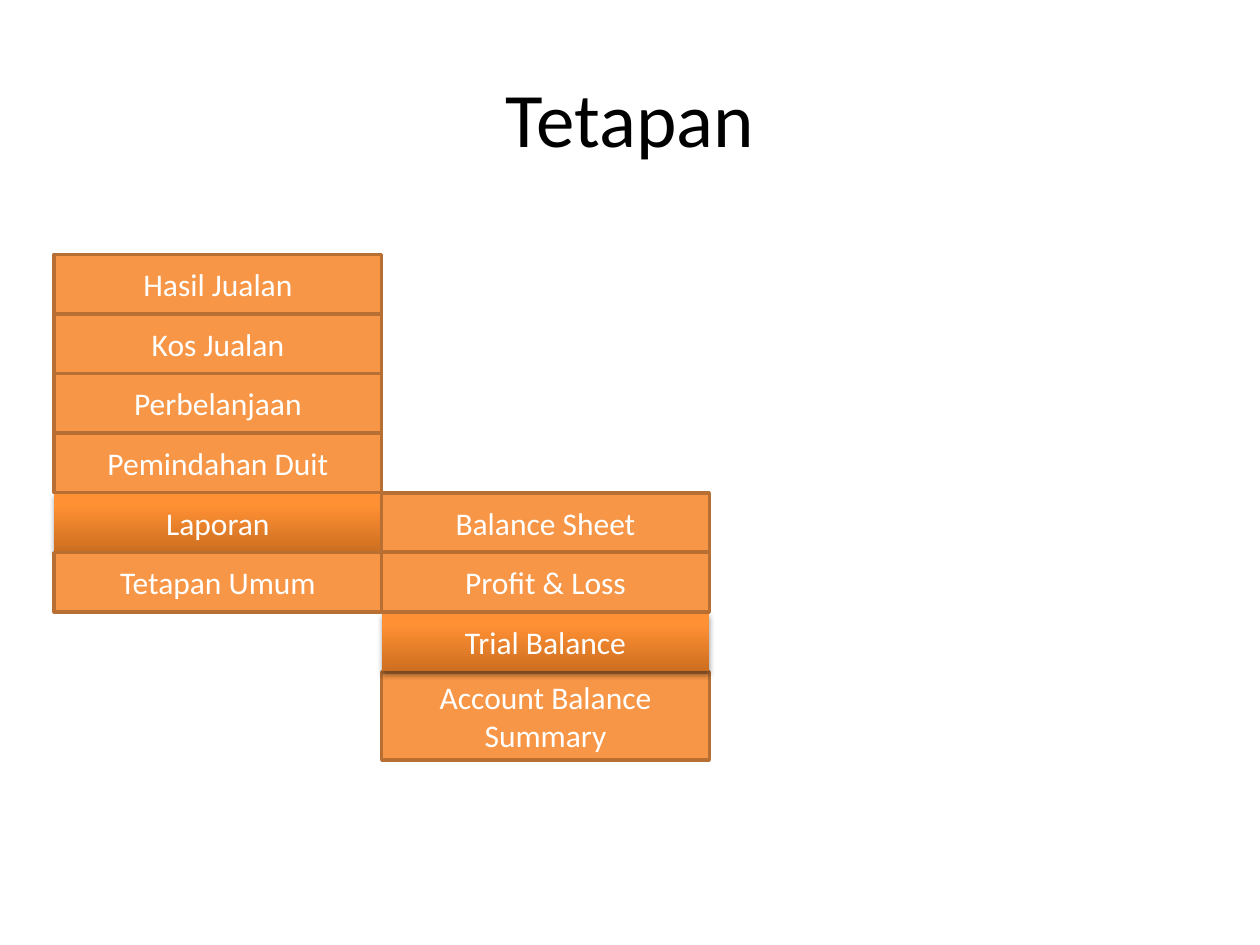
"""Build the Tetapan menu slide with its open report submenu."""
from copy import deepcopy

from lxml.etree import SubElement
from pptx import Presentation
from pptx.dml.color import RGBColor
from pptx.enum.shapes import MSO_SHAPE
from pptx.enum.text import MSO_ANCHOR, PP_ALIGN
from pptx.oxml.ns import qn
from pptx.util import Inches, Pt


def rgb(value):
    return RGBColor.from_string(value)


def write(sp, text, size=18, color="FFFFFF", font="Calibri"):
    tf = sp.text_frame
    tf.word_wrap = True
    tf.vertical_anchor = MSO_ANCHOR.MIDDLE
    p = tf.paragraphs[0]
    p.alignment = PP_ALIGN.CENTER
    r = p.add_run()
    r.text = text
    r.font.size = Pt(size)
    r.font.name = font
    r.font.color.rgb = rgb(color)


prs = Presentation()
prs.slide_width, prs.slide_height = Inches(10), Inches(7.5)
s = prs.slides.add_slide(prs.slide_layouts[5])

title = s.shapes.title
title.left, title.top = Inches(0.5), Inches(0.3)
title.width, title.height = Inches(9), Inches(1.25)
write(title, "Tetapan", size=44, color="000000")

left, top, width, height = 0.43, 2.02, 2.6, 0.47
pitch = (4.86 - top) / 6
stops = [(0, "CC6E20"), (0.8, "FF9034"), (1, "FF9136")]
selected = {"Laporan", "Trial Balance"}
items = [
    ("Hasil Jualan", 0, 0, height),
    ("Kos Jualan", 0, 1, height),
    ("Laporan", 0, 4, height),
    ("Tetapan Umum", 0, 5, height),
    ("Pemindahan Duit", 0, 3, height),
    ("Perbelanjaan", 0, 2, height),
    ("Account Balance Summary", 1, 7, 0.7),
    ("Trial Balance", 1, 6, height),
    ("Balance Sheet", 1, 4, height),
    ("Profit & Loss", 1, 5, height),
]

for text, col, row, item_height in items:
    sp = s.shapes.add_shape(
        MSO_SHAPE.RECTANGLE, Inches(left + col * width), Inches(top + row * pitch),
        Inches(width), Inches(item_height))
    sp.shadow.inherit = False
    if text in selected:
        sp.fill.gradient()
        sp.fill.gradient_angle = 90
        gs_list = sp._element.spPr.find(".//" + qn("a:gsLst"))
        gs_list.append(deepcopy(gs_list[-1]))
        for stop, (position, color) in zip(sp.fill.gradient_stops, stops):
            stop.position = position
            stop.color.rgb = rgb(color)
        sp.line.fill.background()
        effects = sp._element.spPr.find(qn("a:effectLst"))
        shadow = SubElement(effects, qn("a:outerShdw"), blurRad=str(Pt(3.1)),
                            dist=str(Pt(1.8)), dir="5400000", rotWithShape="0")
        shade = SubElement(shadow, qn("a:srgbClr"), val="000000")
        SubElement(shade, qn("a:alpha"), val="35000")
    else:
        sp.fill.solid()
        sp.fill.fore_color.rgb = rgb("F79646")
        sp.line.color.rgb = rgb("B76F34")
        sp.line.width = Pt(2)
    write(sp, text)

prs.save("out.pptx")
